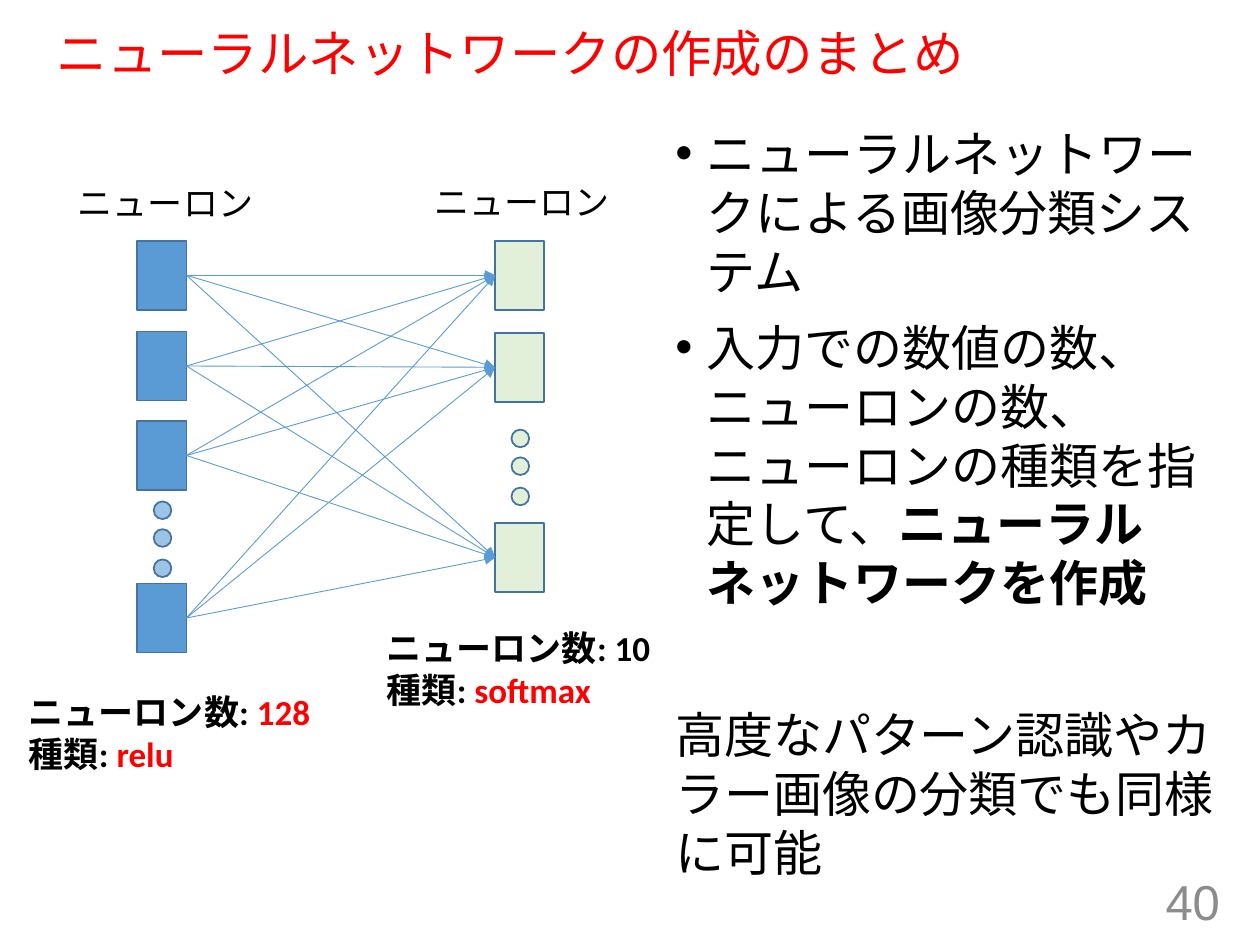
"""Build a slide that sums up how a two-layer neural network is made."""
from dataclasses import dataclass

from lxml.etree import SubElement
from pptx import Presentation
from pptx.dml.color import RGBColor
from pptx.enum.lang import MSO_LANGUAGE_ID
from pptx.enum.shapes import MSO_CONNECTOR, MSO_SHAPE
from pptx.enum.text import MSO_ANCHOR, MSO_AUTO_SIZE, PP_ALIGN
from pptx.oxml.ns import qn
from pptx.util import Inches, Pt

RECT, OVAL = MSO_SHAPE.RECTANGLE, MSO_SHAPE.OVAL
STRAIGHT = MSO_CONNECTOR.STRAIGHT
MIDDLE, LEFT, RIGHT = MSO_ANCHOR.MIDDLE, PP_ALIGN.LEFT, PP_ALIGN.RIGHT
FIXED, GROW = MSO_AUTO_SIZE.NONE, MSO_AUTO_SIZE.SHAPE_TO_FIT_TEXT
JAPANESE = MSO_LANGUAGE_ID.JAPANESE


@dataclass
class Theme:
    head: str = "Arial"
    note: str = "Calibri"
    title: float = 28.8
    body: float = 28
    label: float = 20
    black: str = "000000"
    red: str = "FF0000"
    gray: str = "8C8C8C"
    blue: str = "5B9BD5"
    pale: str = "9DC3E6"
    green: str = "E2F0D9"
    edge: str = "43739E"


theme = Theme()


def add_run(para, text, face, size, color, bold=False):
    run = para.add_run()
    run.text = text
    font = run.font
    font.name, font.size, font.bold = face, Pt(size), bold
    font.color.rgb = RGBColor.from_string(color)
    font.language_id = JAPANESE


def add_node(kind, left, top, width, height, color):
    node = slide.shapes.add_shape(
        kind, Inches(left), Inches(top), Inches(width), Inches(height))
    node.shadow.inherit = False
    node.fill.solid()
    node.fill.fore_color.rgb = RGBColor.from_string(color)
    node.line.color.rgb = RGBColor.from_string(theme.edge)
    node.line.width = Pt(1)
    return node


deck = Presentation()
deck.slide_width, deck.slide_height = Inches(10), Inches(7.5)
slide = deck.slides.add_slide(deck.slide_layouts[1])

title = slide.shapes.title
title.left, title.top = Inches(0.35), Inches(0.19)
title.width, title.height = Inches(9.25), Inches(0.51)
frame = title.text_frame
frame.auto_size, frame.vertical_anchor = FIXED, MIDDLE
para = frame.paragraphs[0]
para.alignment, para.line_spacing = LEFT, 0.9
add_run(para, "ニューラルネットワークの作成のまとめ",
        theme.head, theme.title, theme.red)

body = slide.placeholders[1]
body.left, body.top = Inches(5.26), Inches(0.93)
body.width, body.height = Inches(4.52), Inches(6.23)
frame = body.text_frame
frame.auto_size = FIXED
points = [
    (0, True, [("ニューラルネットワークによる画像分類システム", False)]),
    (10, True, [("入力での数値の数、ニューロンの数、ニューロンの種類を指定して、", False),
                ("ニューラルネットワークを作成", True)]),
    (53, False, [("高度なパターン認識やカラー画像の分類でも同様に可能", False)]),
]
for row, (gap, bullet, runs) in enumerate(points):
    para = frame.add_paragraph() if row else frame.paragraphs[0]
    para.space_before = Pt(gap)
    props = para._p.get_or_add_pPr()
    indent = Inches(0.25) if bullet else 0
    props.set("marL", str(indent))
    props.set("indent", str(-indent))
    if bullet:
        SubElement(props, qn("a:buFont"), typeface="Arial")
        SubElement(props, qn("a:buChar"), char="•")
    else:
        SubElement(props, qn("a:buNone"))
    for text, bold in runs:
        add_run(para, text, theme.head, theme.body, theme.black, bold)

box = slide.shapes.add_textbox(
    Inches(7.53), Inches(6.95), Inches(2.25), Inches(0.4))
frame = box.text_frame
frame.word_wrap, frame.vertical_anchor = True, MIDDLE
para = frame.paragraphs[0]
para.alignment = RIGHT
add_run(para, "40", theme.head, theme.body, theme.gray)

labels = [
    (0.52, 1.39, 1.6, 0.44, False, [[("ニューロン", theme.black)]]),
    (3.35, 1.38, 1.6, 0.44, False, [[("ニューロン", theme.black)]]),
    (0.13, 5.43, 2.45, 0.77, True,
     [[("ニューロン数: ", theme.black), ("128", theme.red)],
      [("種類: ", theme.black), ("relu", theme.red)]]),
    (2.97, 4.92, 2.31, 0.77, True,
     [[("ニューロン数: 10", theme.black)],
      [("種類: ", theme.black), ("softmax", theme.red)]]),
]
for left, top, width, height, bold, lines in labels:
    box = slide.shapes.add_textbox(
        Inches(left), Inches(top), Inches(width), Inches(height))
    frame = box.text_frame
    frame.word_wrap, frame.auto_size = False, GROW
    for row, runs in enumerate(lines):
        para = frame.add_paragraph() if row else frame.paragraphs[0]
        for text, color in runs:
            add_run(para, text, theme.note, theme.label, color, bold)

layers = []
for left, tops, color, dots, tint in [
    (1.09, (1.91, 2.63, 3.34, 4.63), theme.blue, 3.98, theme.pale),
    (3.93, (1.91, 2.64, 4.15), theme.green, 3.41, theme.green),
]:
    layers.append([add_node(RECT, left, top, 0.39, 0.55, color)
                   for top in tops])
    for step in (0, 0.22, 0.46):
        add_node(OVAL, left + 0.13, dots + step, 0.14, 0.14, tint)

for source in layers[0]:
    for target in layers[1]:
        link = slide.shapes.add_connector(STRAIGHT, 0, 0, 0, 0)
        link.begin_connect(source, 3)
        link.end_connect(target, 1)
        link.line.color.rgb = RGBColor.from_string(theme.blue)
        link.line.width = Pt(0.5)
        props = link._element.spPr
        SubElement(props.find(qn("a:ln")), qn("a:tailEnd"), type="triangle")
        SubElement(props, qn("a:effectLst"))

deck.save("out.pptx")
